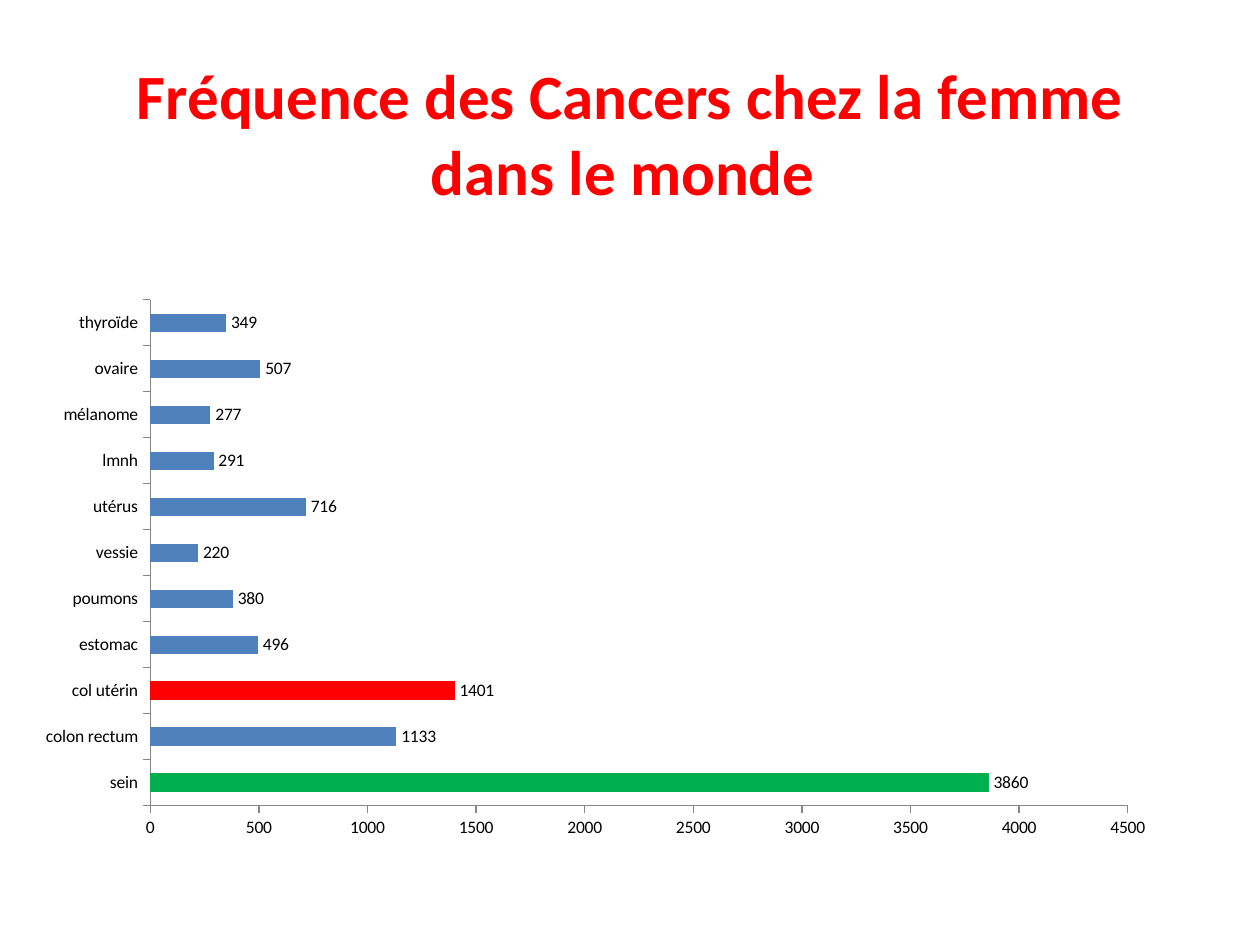
from lxml import etree
from pptx import Presentation
from pptx.chart.data import CategoryChartData
from pptx.dml.color import RGBColor
from pptx.enum.chart import XL_CHART_TYPE, XL_LABEL_POSITION, XL_TICK_MARK
from pptx.enum.text import MSO_ANCHOR, PP_ALIGN
from pptx.oxml.ns import qn
from pptx.util import Inches, Pt

BAR = XL_CHART_TYPE.BAR_CLUSTERED
OUTSIDE_END = XL_LABEL_POSITION.OUTSIDE_END
TICK_OUT = XL_TICK_MARK.OUTSIDE
TICK_NONE = XL_TICK_MARK.NONE
MIDDLE = MSO_ANCHOR.MIDDLE
CENTER = PP_ALIGN.CENTER

CANCERS = {
    "sein": 3860,
    "colon rectum": 1133,
    "col utérin": 1401,
    "estomac": 496,
    "poumons": 380,
    "vessie": 220,
    "utérus": 716,
    "lmnh": 291,
    "mélanome": 277,
    "ovaire": 507,
    "thyroïde": 349,
}
HIGHLIGHTS = {"sein": "00B050", "col utérin": "FF0000"}


def color(value):
    return RGBColor.from_string(value)


def format_font(font, name="Calibri", size=10, fill="000000", bold=False):
    font.name = name
    font.size = Pt(size)
    font.bold = bold
    font.color.rgb = color(fill)


def write_text(frame, text, align=CENTER, **style):
    para = frame.paragraphs[0]
    para.alignment = align
    span = para.add_run()
    span.text = text
    format_font(span.font, **style)


def place_plot(chart, x, y, w, h):
    area = chart._chartSpace.chart.plotArea
    for old in area.findall(qn("c:layout")):
        area.remove(old)
    layout = etree.Element(qn("c:layout"))
    manual = etree.SubElement(layout, qn("c:manualLayout"))
    settings = {"layoutTarget": "inner", "xMode": "edge", "yMode": "edge",
                "x": x, "y": y, "w": w, "h": h}
    for tag, value in settings.items():
        etree.SubElement(manual, qn(f"c:{tag}")).set("val", str(value))
    area.insert(0, layout)


class SlideBuilder:
    bar_color = "4F81BD"
    axis_color = "868686"
    title_color = "FF0000"

    def __init__(self, page):
        self.page = page

    def title(self, text, left, top, width, height):
        box = self.page.shapes.title
        box.left, box.top = Inches(left), Inches(top)
        box.width, box.height = Inches(width), Inches(height)
        box.text_frame.word_wrap = True
        box.text_frame.vertical_anchor = MIDDLE
        write_text(box.text_frame, text, size=36, fill=self.title_color, bold=True)

    def axis(self, axis):
        axis.has_major_gridlines = False
        axis.major_tick_mark = TICK_OUT
        axis.minor_tick_mark = TICK_NONE
        axis.format.line.color.rgb = color(self.axis_color)
        axis.format.line.width = Pt(0.75)
        format_font(axis.tick_labels.font)

    def bar_chart(self, values, highlights, left, top, width, height):
        data = CategoryChartData()
        data.categories = list(values)
        data.add_series("Series 1", list(values.values()))
        chart = self.page.shapes.add_chart(
            BAR, Inches(left), Inches(top), Inches(width), Inches(height), data
        ).chart
        chart.has_title = False
        chart.has_legend = False
        format_font(chart.font)
        self.axis(chart.category_axis)
        self.axis(chart.value_axis)
        chart.value_axis.minimum_scale = 0
        chart.value_axis.maximum_scale = 4500
        chart.value_axis.major_unit = 500

        plot = chart.plots[0]
        plot.gap_width = 150
        plot.vary_by_categories = False
        plot.has_data_labels = True
        labels = plot.data_labels
        labels.show_value = True
        labels.position = OUTSIDE_END
        format_font(labels.font)

        bars = plot.series[0]
        bars.format.fill.solid()
        bars.format.fill.fore_color.rgb = color(self.bar_color)
        for index, name in enumerate(values):
            if name in highlights:
                fill = bars.points[index].format.fill
                fill.solid()
                fill.fore_color.rgb = color(highlights[name])
        place_plot(chart, 0.107, 0.074, 0.862, 0.849)


def main():
    deck = Presentation()
    deck.slide_width, deck.slide_height = Inches(10), Inches(7.5)
    builder = SlideBuilder(deck.slides.add_slide(deck.slide_layouts[5]))
    builder.title("Fréquence des Cancers chez la femme dans le monde ", 0.5, 0.3, 9, 1.5)
    builder.bar_chart(CANCERS, HIGHLIGHTS, 0.23, 2.03, 9, 4.73)
    deck.save("out.pptx")


if __name__ == "__main__":
    main()
